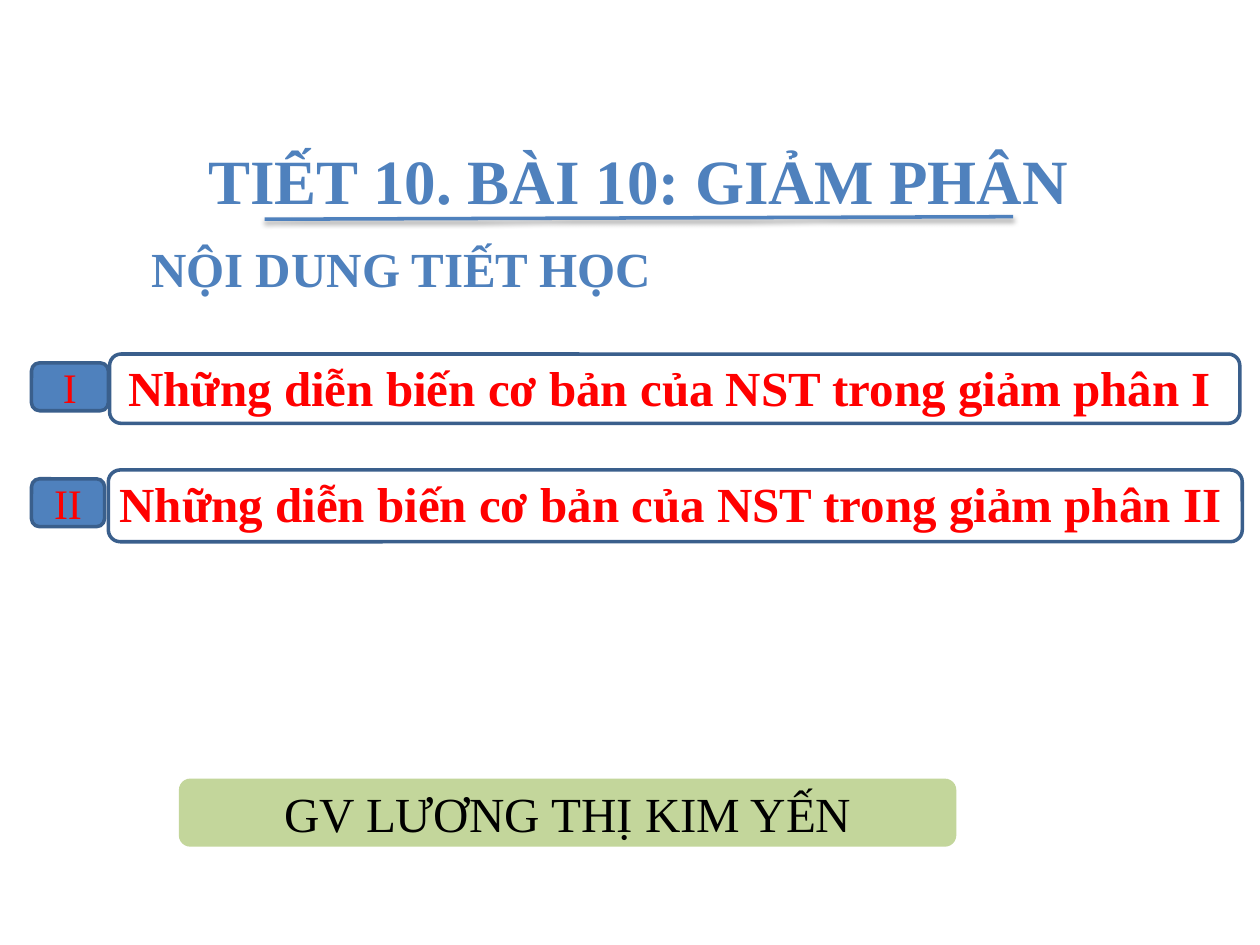
from lxml import etree
from pptx import Presentation
from pptx.dml.color import RGBColor
from pptx.enum.shapes import MSO_CONNECTOR, MSO_SHAPE
from pptx.enum.text import MSO_ANCHOR, MSO_AUTO_SIZE, PP_ALIGN
from pptx.oxml.ns import qn
from pptx.util import Inches, Pt

ROUNDED = MSO_SHAPE.ROUNDED_RECTANGLE
STRAIGHT = MSO_CONNECTOR.STRAIGHT
TOP, MIDDLE = MSO_ANCHOR.TOP, MSO_ANCHOR.MIDDLE
LEFT, CENTER = PP_ALIGN.LEFT, PP_ALIGN.CENTER
FIXED = MSO_AUTO_SIZE.NONE

BLUE = RGBColor(0x4F, 0x81, 0xBD)
DARK_BLUE = RGBColor(0x3A, 0x5F, 0x8C)
RED = RGBColor(0xFF, 0x00, 0x00)
GREEN = RGBColor(0xC3, 0xD6, 0x9B)
BLACK = RGBColor(0x00, 0x00, 0x00)
FONT = "Times New Roman"

# Each section: numeral, heading, then (left, top, width, height) of its parts
SECTIONS = [
    ("I", "Những diễn biến cơ bản của NST trong giảm phân I",
     (0.25, 2.88, 0.61, 0.38), (0.87, 2.81, 8.97, 0.55), (0.92, 2.79, 9.05, 0.57)),
    ("II", "Những diễn biến cơ bản của NST trong giảm phân II",
     (0.25, 3.8, 0.58, 0.38), (0.86, 3.73, 9, 0.57), (0.85, 3.71, 9.12, 0.57)),
]


def box(bounds):
    return [Inches(length) for length in bounds]


def write(shape, text, size, color, bold=False, align=CENTER, anchor=TOP):
    frame = shape.text_frame
    frame.word_wrap = True
    frame.auto_size = FIXED
    frame.vertical_anchor = anchor
    frame.text = text
    paragraph = frame.paragraphs[0]
    paragraph.alignment = align
    font = paragraph.font
    font.name, font.size, font.bold = FONT, Pt(size), bold
    font.color.rgb = color


def add_heading(slide, bounds, text, color, align):
    heading = slide.shapes.add_textbox(*box(bounds))
    write(heading, text, 28, color, bold=True, align=align)


def add_rounded(slide, bounds, fill=None, line=None):
    panel = slide.shapes.add_shape(ROUNDED, *box(bounds))
    panel.shadow.inherit = False
    if fill is None:
        panel.fill.background()
    else:
        panel.fill.solid()
        panel.fill.fore_color.rgb = fill
    if line is None:
        panel.line.fill.background()
    else:
        panel.line.color.rgb = line
        panel.line.width = Pt(2)
    return panel


def add_title(slide, bounds, text):
    title = slide.shapes.title
    title.left, title.top, title.width, title.height = box(bounds)
    write(title, text, 36, BLUE, bold=True)


def add_underline(slide, start, end):
    underline = slide.shapes.add_connector(STRAIGHT, *box(start + end))
    underline.line.color.rgb = BLUE
    underline.line.width = Pt(2)
    # Soft shadow straight below the line
    effects = etree.SubElement(underline._element.spPr, qn("a:effectLst"))
    shadow = etree.SubElement(
        effects, qn("a:outerShdw"), blurRad=str(Pt(3.1)), dist=str(Pt(1.6)),
        dir="5400000", rotWithShape="0")
    shade = etree.SubElement(shadow, qn("a:srgbClr"), val=str(BLACK))
    etree.SubElement(shade, qn("a:alpha"), val="38000")


def add_section(slide, numeral, heading, badge_bounds, frame_bounds, text_bounds):
    badge = add_rounded(slide, badge_bounds, BLUE, DARK_BLUE)
    write(badge, numeral, 24, RED, anchor=MIDDLE)
    add_rounded(slide, frame_bounds, line=DARK_BLUE)
    add_heading(slide, text_bounds, heading, RED, LEFT)


def main():
    deck = Presentation()
    deck.slide_width, deck.slide_height = Inches(10), Inches(7.5)
    slide = deck.slides.add_slide(deck.slide_layouts[5])

    # Lesson title and subtitle
    add_title(slide, (0.82, 1.07, 8.49, 0.71), "TIẾT 10. BÀI 10: GIẢM PHÂN")
    add_underline(slide, (2.1, 1.74), (8.04, 1.72))
    add_heading(slide, (0.92, 1.84, 4.53, 0.57), "NỘI DUNG TIẾT HỌC", BLUE, CENTER)

    # Lesson contents
    for section in SECTIONS:
        add_section(slide, *section)

    # Teacher
    teacher = add_rounded(slide, (1.42, 6.18, 6.17, 0.54), GREEN)
    write(teacher, "GV LƯƠNG THỊ KIM YẾN", 28, BLACK, anchor=MIDDLE)

    deck.save("out.pptx")


if __name__ == "__main__":
    main()
